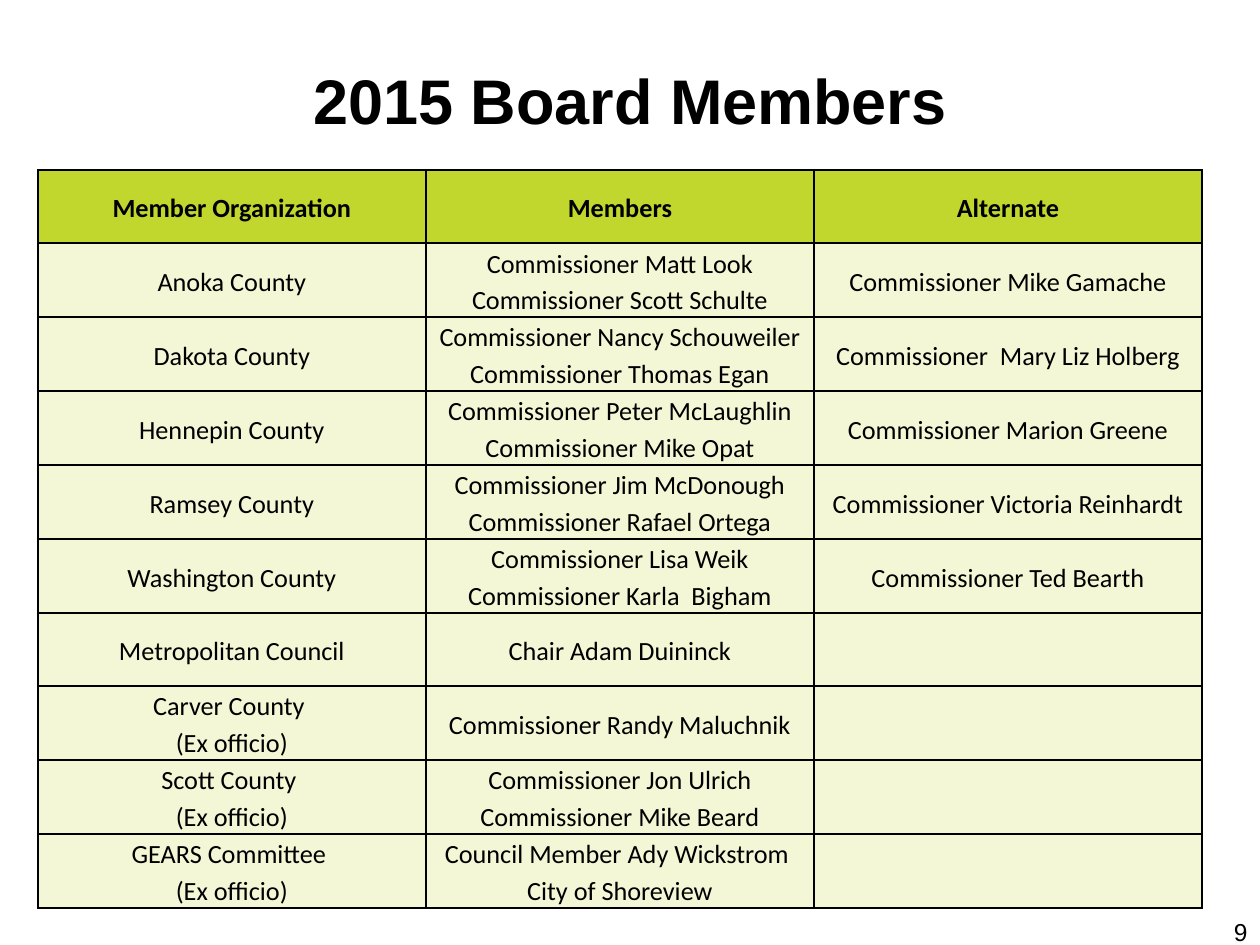
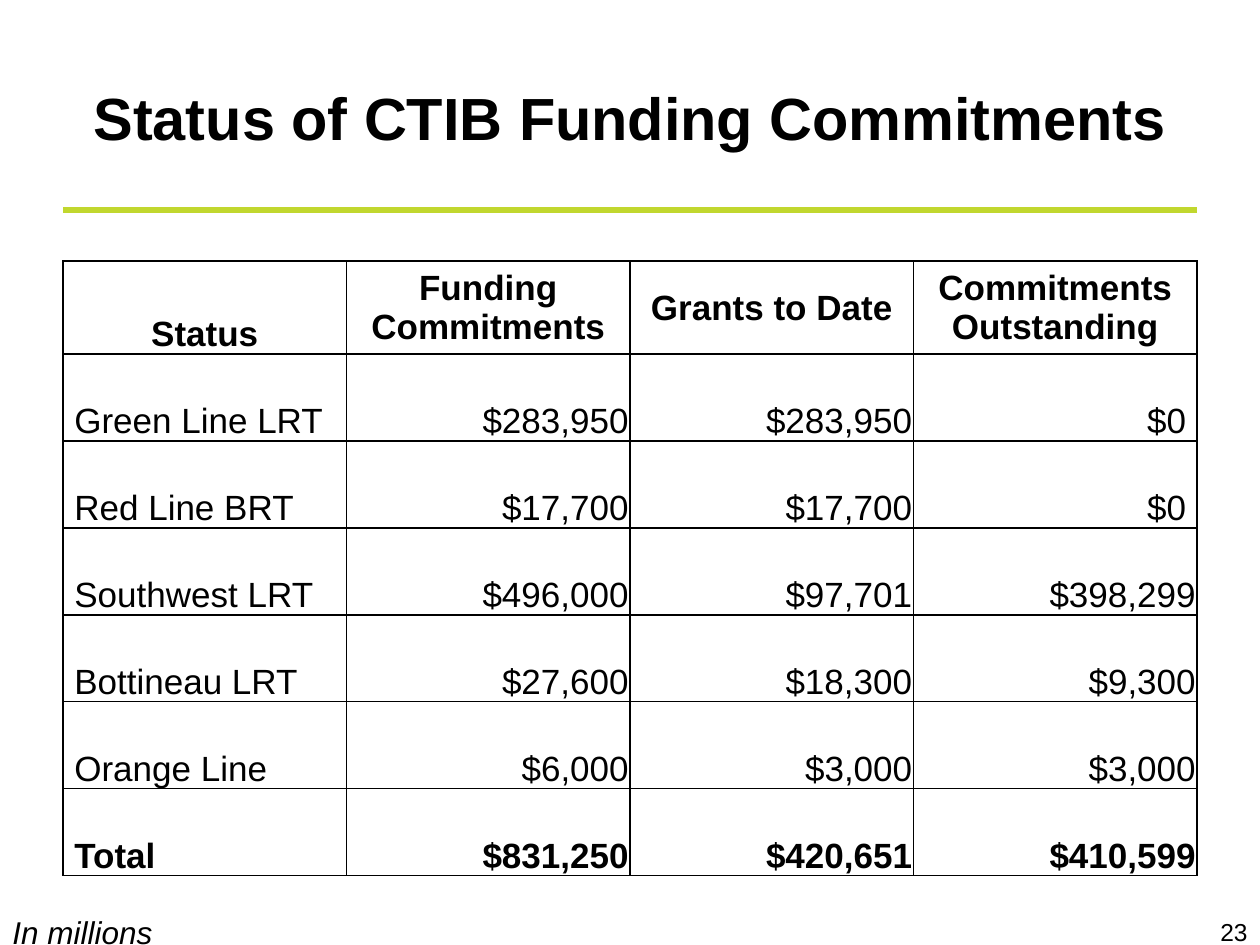
from dataclasses import dataclass

from lxml import etree
from pptx import Presentation
from pptx.dml.color import RGBColor
from pptx.enum.shapes import MSO_CONNECTOR
from pptx.enum.text import MSO_ANCHOR, MSO_AUTO_SIZE, PP_ALIGN
from pptx.oxml.ns import qn
from pptx.util import Emu, Pt

LEFT, CENTER, RIGHT = PP_ALIGN.LEFT, PP_ALIGN.CENTER, PP_ALIGN.RIGHT
MIDDLE, BOTTOM = MSO_ANCHOR.MIDDLE, MSO_ANCHOR.BOTTOM
STRAIGHT = MSO_CONNECTOR.STRAIGHT
NO_AUTOFIT = MSO_AUTO_SIZE.NONE
EMU_PER_PX = 9144
TITLE_ONLY = 5
RULE_ID = 20


@dataclass(frozen=True)
class Theme:
    ink: str = "000000"
    lime: str = "C1D72E"
    pale_lime: str = "F3F7D5"
    white: str = "FFFFFF"
    sans: str = "Arial"
    roster_font: str = "Calibri"
    board_title: int = 36
    funding_title: int = 34
    roster_size: int = 15
    funding_size: int = 20
    note_size: int = 18
    page_size: int = 14
    rule_width: float = 3.5
    border_width: int = 1


THEME = Theme()

BOARD = [
    ("Member Organization", "Members", "Alternate"),
    ("Anoka County", "Commissioner Matt Look\nCommissioner Scott Schulte",
     "Commissioner Mike Gamache"),
    ("Dakota County", "Commissioner Nancy Schouweiler\nCommissioner Thomas Egan",
     "Commissioner  Mary Liz Holberg"),
    ("Hennepin County", "Commissioner Peter McLaughlin\nCommissioner Mike Opat",
     "Commissioner Marion Greene"),
    ("Ramsey County", "Commissioner Jim McDonough\nCommissioner Rafael Ortega",
     "Commissioner Victoria Reinhardt"),
    ("Washington County", "Commissioner Lisa Weik\nCommissioner Karla  Bigham",
     "Commissioner Ted Bearth"),
    ("Metropolitan Council", "Chair Adam Duininck", ""),
    ("Carver County \n(Ex officio)", "Commissioner Randy Maluchnik", ""),
    ("Scott County \n(Ex officio)", "Commissioner Jon Ulrich\nCommissioner Mike Beard", ""),
    ("GEARS Committee \n(Ex officio)", "Council Member Ady Wickstrom \nCity of Shoreview", ""),
]

FUNDING = [
    ("Status", "Funding Commitments", "Grants to Date", "Commitments Outstanding"),
    ("Green Line LRT", "$283,950", "$283,950", "$0 "),
    ("Red Line BRT", "$17,700", "$17,700", "$0 "),
    ("Southwest LRT", "$496,000", "$97,701", "$398,299"),
    ("Bottineau LRT", "$27,600", "$18,300", "$9,300"),
    ("Orange Line", "$6,000", "$3,000", "$3,000"),
    ("Total", "$831,250", "$420,651", "$410,599"),
]


def px(length):
    return Emu(length * EMU_PER_PX)


def color(value):
    return RGBColor.from_string(value)


def write(text_frame, text, size, font=THEME.sans, align=LEFT, bold=False, italic=False,
          line_spacing=None):
    for index, line in enumerate(text.split("\n")):
        paragraph = text_frame.paragraphs[0] if index == 0 else text_frame.add_paragraph()
        paragraph.alignment = align
        paragraph.line_spacing = line_spacing
        run = paragraph.add_run()
        run.text = line
        run.font.name = font
        run.font.size = Pt(size)
        run.font.bold = bold
        run.font.italic = italic
        run.font.color.rgb = color(THEME.ink)


def add_titled_slide(presentation, title, size, height):
    slide = presentation.slides.add_slide(presentation.slide_layouts[TITLE_ONLY])
    shape = slide.shapes.title
    shape.left, shape.top, shape.width, shape.height = px(50), px(30), px(900), px(height)
    shape.text_frame.word_wrap = True
    shape.text_frame.auto_size = NO_AUTOFIT
    shape.text_frame.vertical_anchor = MIDDLE
    write(shape.text_frame, title, size, align=CENTER, bold=True)
    return slide


def add_text(slide, left, top, width, height, text, size, **style):
    shape = slide.shapes.add_textbox(px(left), px(top), px(width), px(height))
    shape.text_frame.word_wrap = True
    write(shape.text_frame, text, size, **style)


def add_page_number(slide, number):
    add_text(slide, 767, 723, 233, 27, number, THEME.page_size, align=RIGHT)


def add_layout_rule(slide):
    rule = slide.shapes.add_connector(STRAIGHT, px(50), px(167), px(950), px(167))
    rule.line.color.rgb = color(THEME.lime)
    rule.line.width = Pt(THEME.rule_width)
    element = rule._element
    etree.SubElement(element.spPr, qn("a:effectLst"))
    element.nvCxnSpPr.cNvPr.set("id", str(RULE_ID))
    slide.slide_layout.shapes._spTree.append(element)


def set_borders(cell):
    properties = cell._tc.get_or_add_tcPr()
    for index, side in enumerate(("a:lnL", "a:lnR", "a:lnT", "a:lnB")):
        line = etree.Element(qn(side), w=str(Pt(THEME.border_width)))
        fill = etree.SubElement(line, qn("a:solidFill"))
        etree.SubElement(fill, qn("a:srgbClr"), val=THEME.ink)
        properties.insert(index, line)


def set_margins(cell, left, top, right, bottom):
    cell.margin_left, cell.margin_top = px(left), px(top)
    cell.margin_right, cell.margin_bottom = px(right), px(bottom)


def set_fill(cell, value, alpha=None):
    cell.fill.solid()
    cell.fill.fore_color.rgb = color(value)
    if alpha is not None:
        tint = cell._tc.tcPr.find(qn("a:solidFill")).find(qn("a:srgbClr"))
        etree.SubElement(tint, qn("a:alpha"), val=str(alpha * 1000))


def add_grid(slide, left, top, column_width, row_heights, rows, fill_cell):
    columns = len(rows[0])
    frame = slide.shapes.add_table(len(rows), columns, px(left), px(top),
                                   px(column_width * columns), px(sum(row_heights)))
    table = frame.table
    table.first_row = table.horz_banding = False
    for column in table.columns:
        column.width = px(column_width)
    for row, height in zip(table.rows, row_heights):
        row.height = px(height)
    for row_index, values in enumerate(rows):
        for column_index, text in enumerate(values):
            cell = table.cell(row_index, column_index)
            set_borders(cell)
            fill_cell(cell, row_index, column_index, text)


def fill_board_cell(cell, row, column, text):
    header = row == 0
    set_fill(cell, THEME.lime if header else THEME.pale_lime)
    set_margins(cell, 7, 0, 7, 0)
    cell.vertical_anchor = MIDDLE
    if text:
        write(cell.text_frame, text, THEME.roster_size, THEME.roster_font, CENTER,
              bold=header, line_spacing=1.15)


def fill_funding_cell(cell, row, column, text):
    header, total = row == 0, row == len(FUNDING) - 1
    label = column == 0
    if row % 2:
        set_fill(cell, THEME.white, alpha=20)
    else:
        cell.fill.background()
    set_margins(cell, 9 if label and not header else 1, 1, 1, 0)
    cell.vertical_anchor = MIDDLE if header and not label else BOTTOM
    align = CENTER if header else LEFT if label else RIGHT
    write(cell.text_frame, text, THEME.funding_size, align=align, bold=header or total)


def build_board_slide(presentation):
    slide = add_titled_slide(presentation, "2015 Board Members", THEME.board_title, 97)
    add_layout_rule(slide)
    add_grid(slide, 30, 135, 308, [58] * len(BOARD), BOARD, fill_board_cell)
    add_page_number(slide, "9")


def build_funding_slide(presentation):
    slide = add_titled_slide(presentation, "Status of CTIB Funding Commitments",
                             THEME.funding_title, 125)
    heights = [74] + [69] * (len(FUNDING) - 1)
    add_grid(slide, 50, 207, 225, heights, FUNDING, fill_funding_cell)
    add_page_number(slide, "23")
    add_text(slide, 0, 720, 429, 40, "In millions", THEME.note_size, italic=True)


def main():
    presentation = Presentation()
    presentation.slide_width, presentation.slide_height = px(1000), px(750)
    build_board_slide(presentation)
    build_funding_slide(presentation)
    presentation.save("out.pptx")


if __name__ == "__main__":
    main()
